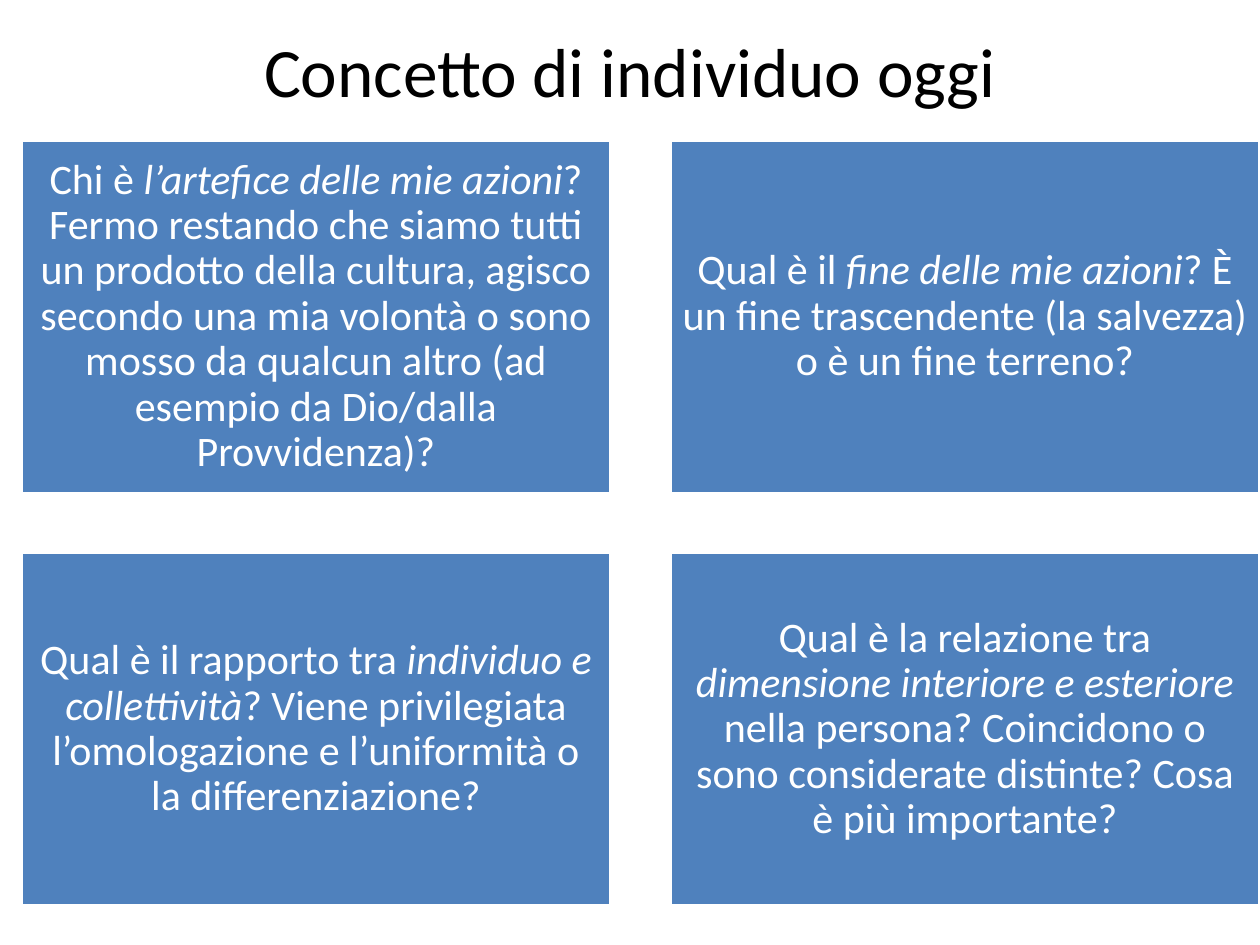
import pptx
import pptx.util
from pptx.dml.color import RGBColor
from pptx.enum.shapes import MSO_SHAPE
from pptx.enum.text import MSO_ANCHOR, PP_ALIGN

PX_PER_INCH = 126
FONT = "Calibri"
BLACK, WHITE, BLUE = "000000", "FFFFFF", "4F81BD"

TITLE = "Concetto di individuo oggi"
# Each question: opening, italic key phrase, continuation
QUESTIONS = [
    ("Chi è ", "l’artefice delle mie azioni",
     "? Fermo restando che siamo tutti un prodotto della cultura, agisco secondo "
     "una mia volontà o sono mosso da qualcun altro (ad esempio da Dio/dalla "
     "Provvidenza)?"),
    ("Qual è il ", "fine delle mie azioni",
     "? È un fine trascendente (la salvezza) o è un fine terreno?"),
    ("Qual è il rapporto tra ", "individuo e collettività",
     "? Viene privilegiata l’omologazione e l’uniformità o la differenziazione?"),
    ("Qual è la relazione tra ", "dimensione interiore e esteriore",
     " nella persona? Coincidono o sono considerate distinte? Cosa è più "
     "importante?"),
]


def px(length):
    return pptx.util.Emu(round(length * 914400 / PX_PER_INCH))


def color(hex_value):
    return RGBColor.from_string(hex_value)


def format_frame(frame, inset):
    values = {"word_wrap": True, "vertical_anchor": MSO_ANCHOR.MIDDLE}
    for side in ("left", "top", "right", "bottom"):
        values[f"margin_{side}"] = px(inset)
    for name, value in values.items():
        setattr(frame, name, value)


def add_run(paragraph, text, size, hex_value, italic=False):
    run = paragraph.add_run()
    run.text = text
    values = {"name": FONT, "size": pptx.util.Pt(size), "italic": italic}
    for name, value in values.items():
        setattr(run.font, name, value)
    run.font.color.rgb = color(hex_value)


def place_title(slide, left, top, width, height):
    title = slide.shapes.title
    box = {"left": left, "top": top, "width": width, "height": height}
    for name, value in box.items():
        setattr(title, name, px(value))
    format_frame(title.text_frame, 6)
    paragraph = title.text_frame.paragraphs[0]
    paragraph.alignment = PP_ALIGN.CENTER
    add_run(paragraph, TITLE, 39.6, BLACK)


def add_card(slide, parts, left, top, width, height):
    card = slide.shapes.add_shape(
        MSO_SHAPE.RECTANGLE, px(left), px(top), px(width), px(height))
    card.shadow.inherit = False
    card.fill.solid()
    card.fill.fore_color.rgb = color(BLUE)
    card.line.color.rgb = color(WHITE)
    card.line.width = pptx.util.Pt(2)
    format_frame(card.text_frame, 12)
    paragraph = card.text_frame.paragraphs[0]
    paragraph.alignment = PP_ALIGN.CENTER
    paragraph.line_spacing = 0.9
    for index, text in enumerate(parts):
        add_run(paragraph, text, 24, WHITE, italic=index == 1)


def add_question_grid(slide, left, top, width, height, columns=2, gap=59):
    rows = len(QUESTIONS) // columns
    card_width = (width - gap * (columns - 1)) / columns
    card_height = (height - gap * (rows - 1)) / rows
    for index, parts in enumerate(QUESTIONS):
        row, column = divmod(index, columns)
        add_card(slide, parts,
                 left + column * (card_width + gap),
                 top + row * (card_height + gap),
                 card_width, card_height)


def main():
    presentation = pptx.Presentation()
    presentation.slide_width = px(1260)
    presentation.slide_height = px(945)
    slide = presentation.slides.add_slide(presentation.slide_layouts[5])
    place_title(slide, 63, 38, 1134, 63)
    add_question_grid(slide, 21, 140, 1239, 766)
    presentation.save("out.pptx")


if __name__ == "__main__":
    main()
